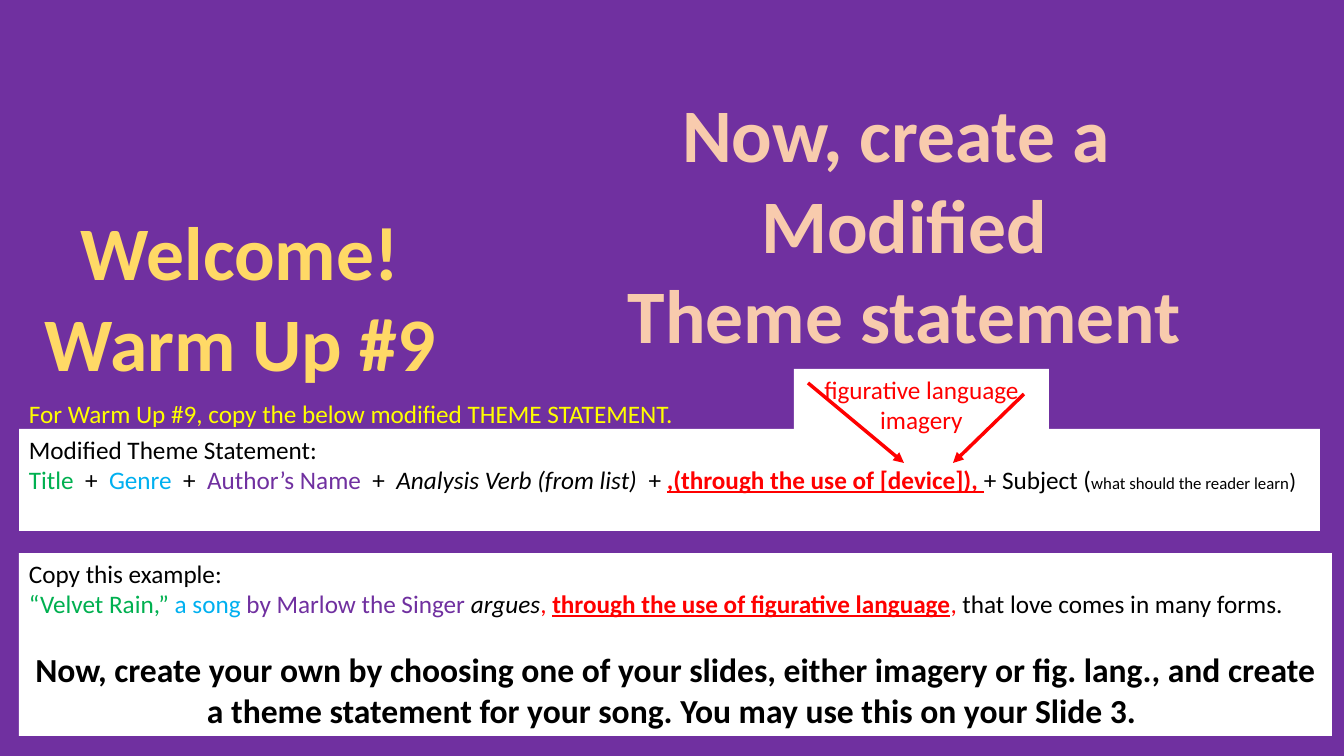
from pptx import Presentation, util as u
from pptx.dml.color import RGBColor
from pptx.enum import shapes as s, text as t
from pptx.oxml.ns import qn
from lxml import etree

SCALE = 914400 / 100.8  # EMU in one px
BLACK, WHITE, RED = "000000", "FFFFFF", "FF0000"
GREEN, BLUE, PURPLE = "00B050", "00B0F0", "7030A0"
MID = t.PP_ALIGN.CENTER


def px(n):
    return u.Emu(round(n * SCALE))


def paint(color, value):
    color.rgb = RGBColor.from_string(value)


def fill(part, value):
    part.fill.solid()
    paint(part.fill.fore_color, value)


def run(words, size=18, color=BLACK, bold=False, italic=False, under=False):
    """Describe a piece of text and its format."""
    return words, size, color, bold, italic, under


def write(shape, lines, align=t.PP_ALIGN.LEFT, wrap=True):
    """Fill a shape with paragraphs, each a list of runs."""
    frame = shape.text_frame
    frame.word_wrap = wrap
    frame.vertical_anchor = t.MSO_ANCHOR.TOP
    for i, line in enumerate(lines):
        para = frame.add_paragraph() if i else frame.paragraphs[0]
        para.alignment = align
        for words, size, color, bold, italic, under in line:
            piece = para.add_run()
            piece.text = words
            font = piece.font
            font.name, font.size = "Calibri", u.Pt(size)
            font.bold, font.italic, font.underline = bold, italic, under
            paint(font.color, color)
    return frame


def label(slide, box, lines, **kw):
    return write(slide.shapes.add_textbox(*map(px, box)), lines, **kw)


def panel(slide, box, lines, **kw):
    rect = slide.shapes.add_shape(s.MSO_SHAPE.RECTANGLE, *map(px, box))
    rect.shadow.inherit = False
    fill(rect, WHITE)
    rect.line.fill.background()
    return write(rect, lines, **kw)


def arrow(slide, *ends):
    line = slide.shapes.add_connector(s.MSO_CONNECTOR.STRAIGHT, *map(px, ends))
    line.line.width = u.Pt(2.5)
    paint(line.line.color, RED)
    props = line._element.spPr
    etree.SubElement(props.get_or_add_ln(), qn("a:tailEnd"), type="triangle")
    etree.SubElement(props, qn("a:effectLst"))


def title(slide, box, color, *lines):
    label(slide, box, [[run(x, size=54, color=color, bold=True)] for x in lines],
          align=MID, wrap=False)


def main():
    deck = Presentation()
    deck.slide_width, deck.slide_height = px(1344), px(756)
    slide = deck.slides.add_slide(deck.slide_layouts[6])
    fill(slide.background, PURPLE)

    # Welcome and instruction
    title(slide, (32, 200, 416, 194), "FFD966", "Welcome!", "Warm Up #9")
    label(slide, (19, 393, 1252, 72), [[
        run("For Warm Up #9, copy the below modified THEME STATEMENT.", color="FFFF00")]])

    # Formula
    plus = run("  +  ")
    panel(slide, (19, 429, 1301, 102), [
        [run("Modified Theme Statement:")],
        [run("Title", color=GREEN), plus,
         run("Genre", color=BLUE), plus,
         run("Author’s Name", color=PURPLE), plus,
         run("Analysis Verb (from list)  ", italic=True), run("+ "),
         run(",(through the use of [device]), ", color=RED, bold=True, under=True),
         run("+ Subject ("), run("what should the reader learn", size=12),
         run(")", size=16)],
    ])

    # Example and task
    frame = panel(slide, (19, 553, 1313, 183), [
        [run("Copy this example:")],
        [run("“Velvet Rain,” ", color=GREEN), run("a song ", color=BLUE),
         run("by Marlow the Singer ", color=PURPLE), run("argues", italic=True),
         run(", ", color=RED),
         run("through the use of figurative language", color=RED, bold=True, under=True),
         run(",", color=RED), run(" that love comes in many forms.")],
        [run("Now, create your own by choosing one of your slides, either imagery "
             "or fig. lang., and create a theme statement for your song. "
             "You may use this on your Slide 3. ", size=24, bold=True)],
    ])
    task = frame.paragraphs[-1]
    task.alignment = MID
    task.space_before = u.Pt(22)

    # Devices with arrows to the formula
    panel(slide, (794, 369, 255, 72),
          [[run(x, color=RED)] for x in ("figurative language", "imagery")], align=MID)
    arrow(slide, 808, 383, 904, 463)
    arrow(slide, 1024, 394, 953, 463)

    # Heading
    title(slide, (615, 82, 579, 285), "F8CBAD",
          "Now, create a ", "Modified", "Theme statement")
    deck.save("out.pptx")


if __name__ == "__main__":
    main()
